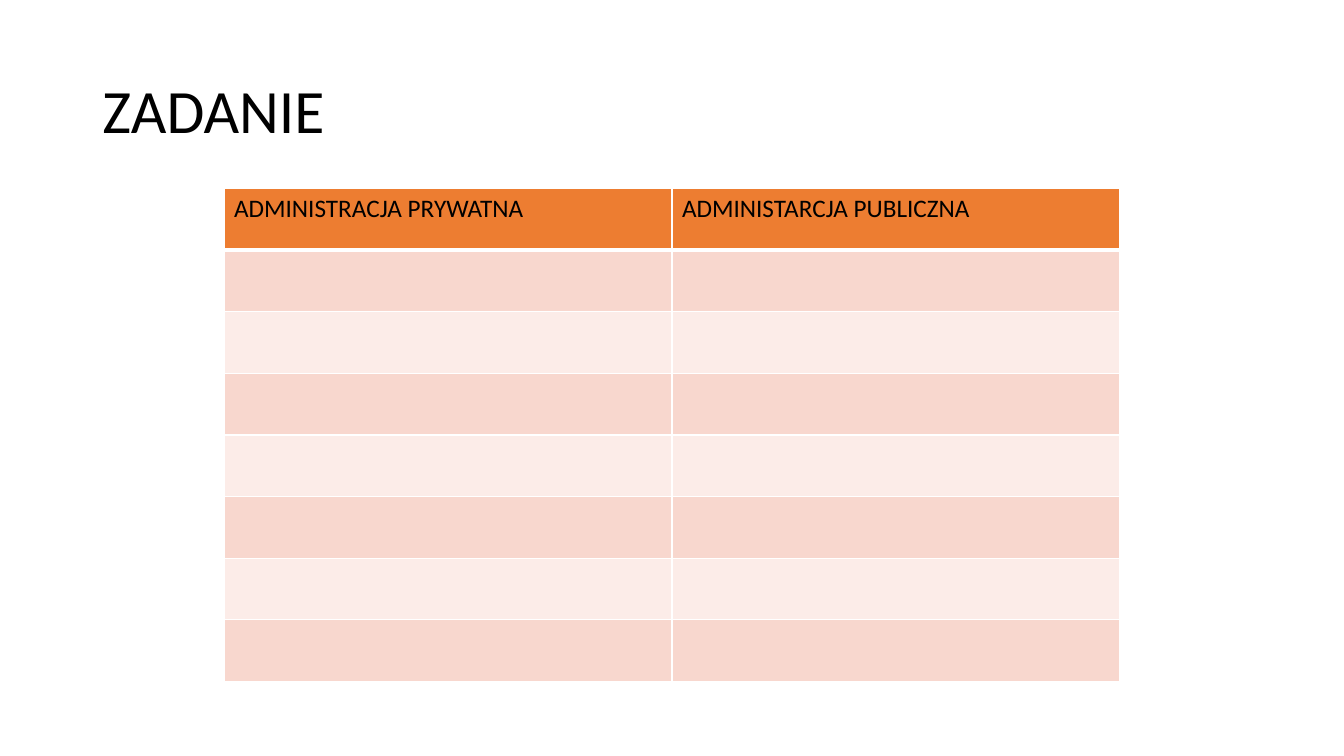
from lxml.etree import SubElement
from pptx import Presentation
from pptx.dml.color import RGBColor
from pptx.enum.text import MSO_ANCHOR, PP_ALIGN
from pptx.oxml.ns import qn
from pptx.util import Pt

BLACK = RGBColor(0x00, 0x00, 0x00)
WHITE = RGBColor(0xFF, 0xFF, 0xFF)
ORANGE = RGBColor(0xED, 0x7D, 0x31)
BANDS = (RGBColor(0xF8, 0xD7, 0xCE), RGBColor(0xFC, 0xEC, 0xE8))

FONT = "Calibri"
HEADINGS = ("ADMINISTRACJA PRYWATNA", "ADMINISTARCJA PUBLICZNA")
EMPTY_ROWS = 7
COLUMN_WIDTH = 320
ROW_HEIGHT = 44


def write_text(frame, text, size, color=BLACK, spacing=1.0):
    para = frame.paragraphs[0]
    para.alignment = PP_ALIGN.LEFT
    para.line_spacing = spacing
    span = para.add_run()
    span.text = text
    span.font.name = FONT
    span.font.size = Pt(size)
    span.font.bold = False
    span.font.color.rgb = color


def set_borders(cell, bottom=1):
    """Draw white 1 pt borders, with a chosen width at the bottom."""
    properties = cell._tc.get_or_add_tcPr()
    for side, width in (("L", 1), ("R", 1), ("T", 1), ("B", bottom)):
        line = SubElement(properties, qn(f"a:ln{side}"), w=str(Pt(width)))
        fill = SubElement(line, qn("a:solidFill"))
        SubElement(fill, qn("a:srgbClr"), val=str(WHITE))


def fill_cell(cell, color):
    cell.fill.solid()
    cell.fill.fore_color.rgb = color


def add_title(page, text):
    box = page.shapes.title
    box.left, box.top, box.width, box.height = Pt(66), Pt(28.75), Pt(828), Pt(104.4)
    box.text_frame.vertical_anchor = MSO_ANCHOR.MIDDLE
    write_text(box.text_frame, text, size=44, spacing=0.9)


def add_task_table(page, left, top):
    rows, columns = EMPTY_ROWS + 1, len(HEADINGS)
    table = page.shapes.add_table(
        rows, columns, Pt(left), Pt(top),
        Pt(columns * COLUMN_WIDTH), Pt(rows * ROW_HEIGHT),
    ).table
    for column in table.columns:
        column.width = Pt(COLUMN_WIDTH)
    for number, row in enumerate(table.rows):
        row.height = Pt(ROW_HEIGHT)
        is_header = number == 0
        for cell, heading in zip(row.cells, HEADINGS):
            set_borders(cell, bottom=3 if is_header else 1)
            fill_cell(cell, ORANGE if is_header else BANDS[(number - 1) % 2])
            if is_header:
                write_text(cell.text_frame, heading, size=18)


def main():
    deck = Presentation()
    deck.slide_width, deck.slide_height = Pt(960), Pt(540)
    page = deck.slides.add_slide(deck.slide_layouts[5])
    page.background.fill.solid()
    page.background.fill.fore_color.rgb = WHITE
    add_title(page, "ZADANIE")
    add_task_table(page, left=160, top=134.7)
    deck.save("out.pptx")


if __name__ == "__main__":
    main()
